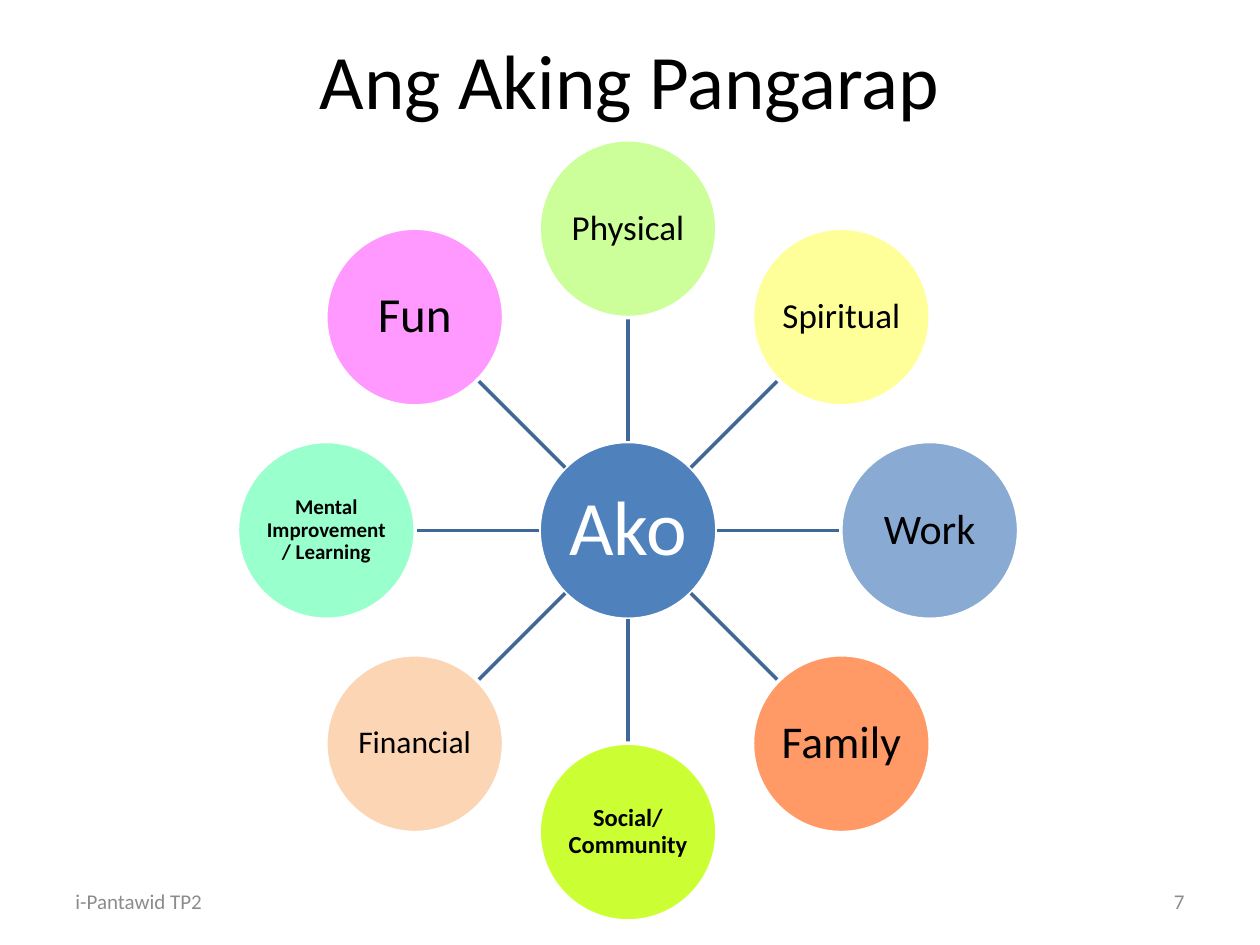
import math
from dataclasses import dataclass

from lxml import etree
from pptx import Presentation
from pptx import util as u
from pptx.dml.color import RGBColor
from pptx.enum import shapes, text
from pptx.oxml.ns import qn


@dataclass(frozen=True)
class Theme:
    font: str = "Calibri"
    ink: str = "000000"
    white: str = "FFFFFF"
    muted: str = "8C8C8C"
    hub: str = "4F81BD"
    spoke: str = "3F6797"
    title_size: int = 44
    hub_size: int = 44
    footer_size: int = 12
    line_width: int = 2


THEME = Theme()
ALIGN = text.PP_ALIGN

# Wheel geometry in points
CX, CY = 358.9, 303.1
RING = 172.4
DIAMETER = 101.6

# Life areas, clockwise from the top: label, fill, type size, bold, inset
AREAS = [
    ("Physical", "CCFF99", 20, False, 0.9),
    ("Spiritual", "FFFF99", 20, False, 0.9),
    ("Work", "89AAD3", 24, False, 1.2),
    ("Family", "FF9966", 26, False, 1.3),
    ("Social/ Community", "CCFF33", 14, True, 0.7),
    ("Financial", "FCD5B5", 18, False, 0.9),
    ("Mental Improvement/ Learning", "99FFCC", 12, True, 0.6),
    ("Fun", "FF99FF", 28, False, 1.4),
]


def write(sp, label, size, color, align=ALIGN.CENTER, bold=False, inset=None, spacing=None):
    tf = sp.text_frame
    frame = {"word_wrap": True, "vertical_anchor": text.MSO_ANCHOR.MIDDLE}
    if inset is not None:
        sides = ("left", "top", "right", "bottom")
        frame.update({f"margin_{side}": u.Pt(inset) for side in sides})
    p = tf.paragraphs[0]
    r = p.add_run()
    formats = [
        (tf, frame),
        (p, {"alignment": align, "line_spacing": spacing}),
        (r, {"text": label}),
        (r.font, {"name": THEME.font, "size": u.Pt(size), "bold": bold}),
    ]
    for target, values in formats:
        for name, value in values.items():
            setattr(target, name, value)
    r.font.color.rgb = RGBColor.from_string(color)


def add_text(s, box, label, size, color, align):
    sp = s.shapes.add_textbox(*map(u.Pt, box))
    write(sp, label, size, color, align)


def add_circle(s, x, y, fill, label, size, color, bold, inset):
    half = DIAMETER / 2
    box = (x - half, y - half, DIAMETER, DIAMETER)
    sp = s.shapes.add_shape(shapes.MSO_SHAPE.OVAL, *map(u.Pt, box))
    sp.shadow.inherit = False
    sp.fill.solid()
    sp.fill.fore_color.rgb = RGBColor.from_string(fill)
    sp.line.color.rgb = RGBColor.from_string(THEME.white)
    sp.line.width = u.Pt(THEME.line_width)
    write(sp, label, size, color, bold=bold, inset=inset, spacing=0.9)


def add_spoke(s, start, end):
    sp = s.shapes.add_connector(
        shapes.MSO_CONNECTOR.STRAIGHT, *map(u.Pt, (*start, *end)))
    sp.line.color.rgb = RGBColor.from_string(THEME.spoke)
    sp.line.width = u.Pt(THEME.line_width)
    etree.SubElement(sp._element.spPr, qn("a:effectLst"))


def polar(radius, angle):
    return CX + radius * math.cos(angle), CY + radius * math.sin(angle)


def main():
    prs = Presentation()
    prs.slide_width, prs.slide_height = u.Pt(720), u.Pt(540)
    s = prs.slides.add_slide(prs.slide_layouts[6])

    # Title
    add_text(s, (36, 0, 648, 90), "Ang Aking Pangarap",
             THEME.title_size, THEME.ink, ALIGN.CENTER)

    # Hub
    add_circle(s, CX, CY, THEME.hub, "Ako", THEME.hub_size, THEME.white, False, 2.2)

    # Spokes and life areas
    for i, (label, fill, size, bold, inset) in enumerate(AREAS):
        angle = math.tau * i / len(AREAS) - math.pi / 2
        add_spoke(s, polar(DIAMETER / 2, angle), polar(RING - DIAMETER / 2, angle))
        add_circle(s, *polar(RING, angle), fill, label, size, THEME.ink, bold, inset)

    # Footer and slide number
    for left, label, align in ((36, "i-Pantawid TP2", ALIGN.LEFT), (516, "7", ALIGN.RIGHT)):
        add_text(s, (left, 500.5, 168, 28.75), label,
                 THEME.footer_size, THEME.muted, align)

    prs.save("out.pptx")


if __name__ == "__main__":
    main()
